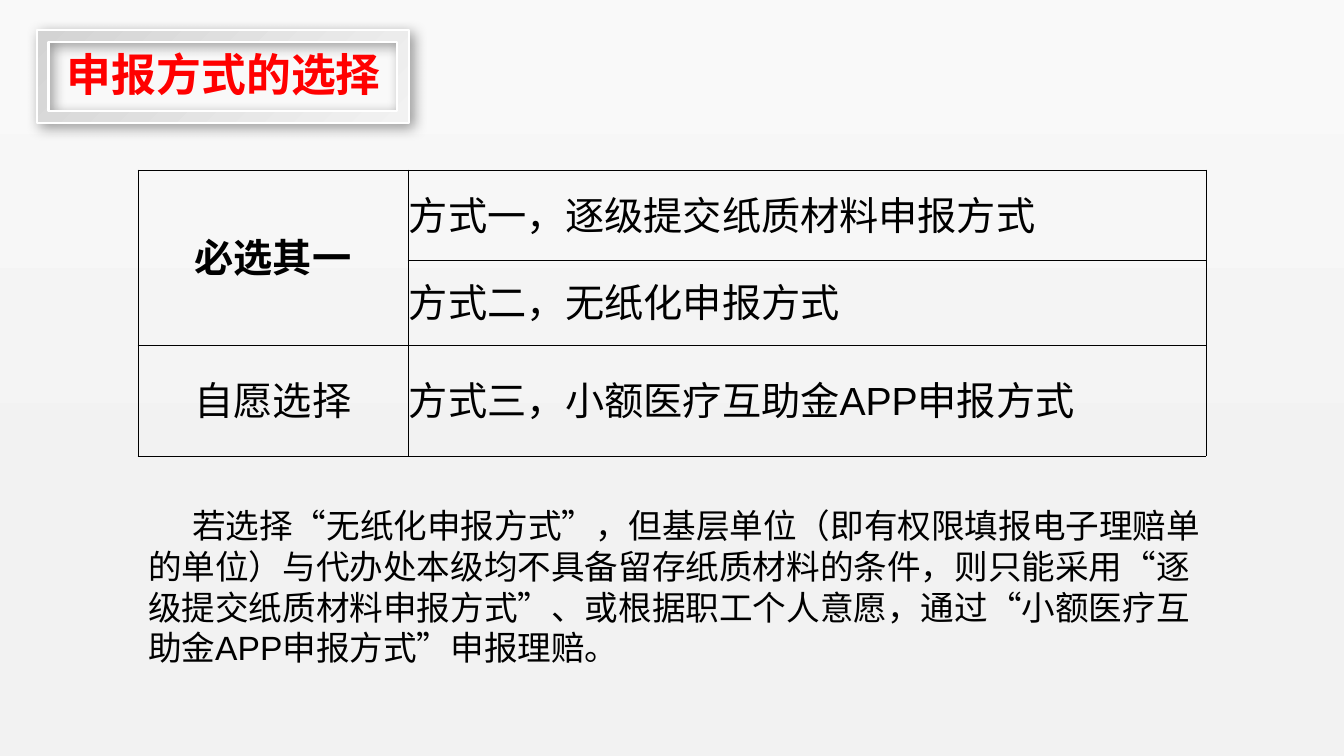
from lxml.etree import SubElement as Sub
from pptx import Presentation
from pptx.dml.color import RGBColor
from pptx.enum.shapes import MSO_SHAPE as Shape
from pptx.enum.text import MSO_ANCHOR as Anchor, MSO_AUTO_SIZE as Auto, PP_ALIGN as Align
from pptx.oxml.ns import qn
from pptx.util import Pt

PX = 12192000 / 1344
SANS = "Noto Sans CJK SC"
HEAD = "申报方式的选择"
ROWS = [
    ("必选其一", "方式一，逐级提交纸质材料申报方式"),
    ("", "方式二，无纸化申报方式"),
    ("自愿选择", "方式三，小额医疗互助金APP申报方式"),
]
NOTE = ("若选择“无纸化申报方式”，但基层单位（即有权限填报电子理赔单的单位）"
        "与代办处本级均不具备留存纸质材料的条件，则只能采用“逐级提交纸质材料申报方式”、"
        "或根据职工个人意愿，通过“小额医疗互助金APP申报方式”申报理赔。")


def px(n):
    """Turn pixels into EMU."""
    return round(n * PX)


def color(code):
    """Turn a hex string into a colour."""
    return RGBColor.from_string(code)


def place(item, box):
    """Move an item to a box of left, top, width and height."""
    item.left, item.top, item.width, item.height = map(px, box)


def write(par, text, size, face="Arial", tint="000000", bold=False):
    """Add one formatted run to a paragraph."""
    run = par.add_run()
    run.text = text
    font = run.font
    font.size, font.bold, font.name = Pt(size), bold, face
    font.color.rgb = color(tint)
    Sub(run._r.get_or_add_rPr(), qn("a:ea"), typeface=SANS)


def blend(fill, stops, angle):
    """Fill with two gradient stops."""
    fill.gradient()
    fill.gradient_angle = angle
    for stop, (spot, code) in zip(fill.gradient_stops, stops):
        stop.position = spot
        stop.color.rgb = color(code)


def header(slide, box):
    """Draw the framed heading."""
    left, top, wide, high = box
    frame = slide.shapes.add_shape(Shape.FRAME, *map(px, box))
    slide.shapes._spTree.insert(2, frame._element)
    blend(frame.fill, [(0, "D3D3D3"), (1, "F2F2F2")], 315)
    frame.line.color.rgb = color("FFFFFF")
    frame.line.width = Pt(1.5)
    effects = Sub(frame._element.spPr, qn("a:effectLst"))
    shade = Sub(effects, qn("a:outerShdw"), blurRad=str(Pt(10)), dist=str(Pt(4)),
                dir="2700000", algn="tl", rotWithShape="0")
    black = Sub(shade, qn("a:srgbClr"), val="000000")
    Sub(black, qn("a:alpha"), val="40000")

    title = slide.shapes.title
    place(title, (left + 19, top + 11, wide - 36, high - 28))
    body = title.text_frame
    body.word_wrap, body.auto_size = False, Auto.NONE
    body.vertical_anchor = Anchor.MIDDLE
    par = body.paragraphs[0]
    par.alignment = Align.CENTER
    write(par, HEAD, 32, SANS, "FF0000", True)


def border(cell):
    """Rule all four sides of a cell."""
    props = cell._tc.get_or_add_tcPr()
    for side in ("lnL", "lnR", "lnT", "lnB"):
        line = Sub(props, qn("a:" + side), w=str(Pt(0.5)))
        Sub(Sub(line, qn("a:solidFill")), qn("a:srgbClr"), val="000000")


def choices(slide, box):
    """Draw the table of filing methods."""
    grid = slide.shapes.add_table(len(ROWS), 2, *map(px, box)).table
    grid.first_row = grid.horz_banding = False
    for col, wide in zip(grid.columns, (270, box[2] - 270)):
        col.width = px(wide)
    for row, high in zip(grid.rows, (90, 85, 111)):
        row.height = px(high)
    grid.cell(0, 0).merge(grid.cell(1, 0))
    for i, texts in enumerate(ROWS):
        for j, text in enumerate(texts):
            cell = grid.cell(i, j)
            border(cell)
            cell.fill.background()
            cell.vertical_anchor = Anchor.MIDDLE
            cell.margin_left = cell.margin_right = cell.margin_top = px(1)
            cell.margin_bottom = px(5)
            if not text:
                continue
            par = cell.text_frame.paragraphs[0]
            par.alignment = Align.LEFT if j else Align.CENTER
            first = i == j == 0
            write(par, text, 28, SANS if j == 0 else "Arial", bold=first)


def remark(slide, box):
    """Write the closing paragraph in the body placeholder."""
    body = slide.placeholders[1]
    place(body, box)
    body.text_frame.auto_size = Auto.NONE
    par = body.text_frame.paragraphs[0]
    props = par._p.get_or_add_pPr()
    props.set("marL", "0")
    props.set("indent", str(px(44)))
    Sub(props, qn("a:buNone"))
    par.space_before = Pt(0)
    par.line_spacing = Pt(29)
    write(par, NOTE, 24)


def main():
    """Build and save the slide."""
    deck = Presentation()
    deck.slide_width, deck.slide_height = px(1344), px(756)
    slide = deck.slides.add_slide(deck.slide_layouts[1])
    blend(slide.background.fill, [(0, "F9F9F9"), (0.71, "F2F2F2")], 270)
    header(slide, (37, 30, 372, 93))
    choices(slide, (138, 170, 1068, 286))
    remark(slide, (138, 500, 1077, 173))
    deck.save("out.pptx")


if __name__ == "__main__":
    main()
